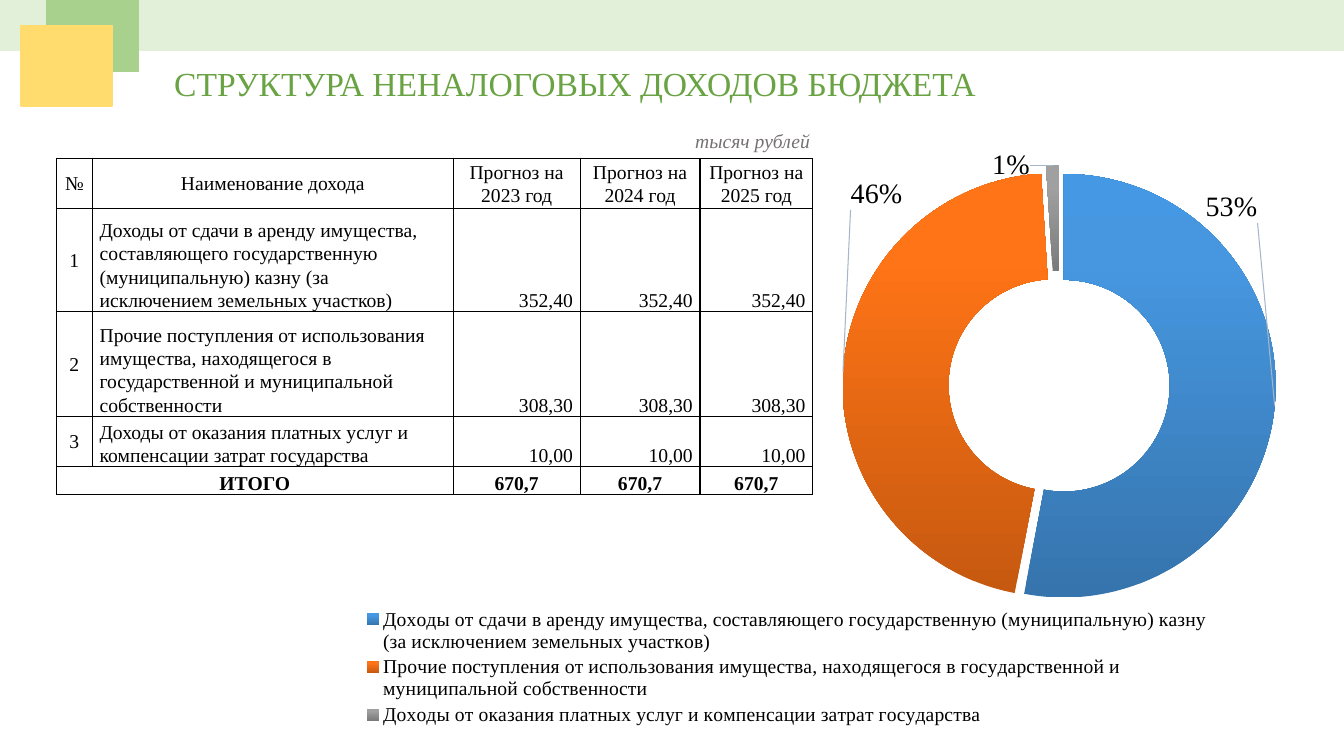
from dataclasses import dataclass

from lxml.etree import SubElement
from pptx import Presentation
from pptx.chart.data import CategoryChartData
from pptx.dml.color import RGBColor
from pptx.enum.chart import XL_CHART_TYPE as ChartType, XL_LEGEND_POSITION as LegendPosition
from pptx.enum.shapes import MSO_SHAPE as Shape
from pptx.enum.text import MSO_ANCHOR as Anchor, PP_ALIGN as Align
from pptx.oxml import parse_xml
from pptx.oxml.ns import nsdecls, qn
from pptx.util import Cm, Pt


@dataclass(frozen=True)
class Theme:
    font: str = "Times New Roman"
    title: str = "6AA343"
    band: str = "E2F0D9"
    green: str = "A9D18E"
    yellow: str = "FFDC6D"
    text: str = "000000"
    note: str = "767171"
    leader: str = "A5B6C8"
    title_size: int = 24
    body_size: int = 14
    label_size: int = 20
    slices: tuple = (("3674AD", "4697E0", "4498E4"),
                     ("C65910", "FF7416", "FF7517"),
                     ("7B7B7B", "A0A0A0", "A1A1A1"))


THEME = Theme()
INCOMES = (
    ("Доходы от сдачи в аренду имущества, составляющего государственную "
     "(муниципальную) казну (за исключением земельных участков)", "352,40", 53),
    ("Прочие поступления от использования имущества, находящегося в "
     "государственной и муниципальной собственности", "308,30", 46),
    ("Доходы от оказания платных услуг и компенсации затрат государства", "10,00", 1),
)
YEARS = (2023, 2024, 2025)
TOTAL = "670,7"
COLUMN_WIDTHS = (0.91, 9.09, 3.2, 3.02, 2.84)
ROW_HEIGHTS = (1.24, 2.59, 2.64, 1.24, 0.71)
EXPLOSIONS = (4, 5, 8)
LABEL_SHIFTS = ((0.01, -0.31), (-0.02, -0.29), (-0.045, -0.085))
PLOT_AREA = (0.528, 0.104, 0.44, 0.679)
LEGEND_AREA = (0.015, 0.795, 0.9, 0.2)


def style_font(font, **values):
    color = values.pop("color", THEME.text)
    for name, value in {"name": THEME.font, "size": Pt(THEME.body_size), **values}.items():
        setattr(font, name, value)
    font.color.rgb = RGBColor.from_string(color)


def write(frame, text, align=Align.LEFT, spacing=None, **font_values):
    para = frame.paragraphs[0]
    para.alignment, para.line_spacing = align, spacing
    span = para.add_run()
    span.text = text
    style_font(span.font, **font_values)


def add_label(page, box, text, **font_values):
    frame = page.shapes.add_textbox(*map(Cm, box)).text_frame
    frame.word_wrap = False
    write(frame, text, **font_values)


def add_block(page, box, color):
    block = page.shapes.add_shape(Shape.RECTANGLE, *map(Cm, box))
    block.shadow.inherit = False
    block.fill.solid()
    block.fill.fore_color.rgb = block.line.color.rgb = RGBColor.from_string(color)
    block.line.width = Pt(1)


def add_header(page, box):
    left, top, width, height = box
    add_label(page, (left + 4.14, top + 1.47, 20.93, 1.27),
              "СТРУКТУРА НЕНАЛОГОВЫХ ДОХОДОВ БЮДЖЕТА",
              size=Pt(THEME.title_size), color=THEME.title)
    add_block(page, (left, top, width, height), THEME.band)
    add_block(page, (left + 1.19, top, 2.31, 1.8), THEME.green)
    add_block(page, (left + 0.53, top + 0.64, 2.29, 2.03), THEME.yellow)


def add_borders(cell):
    properties = cell._tc.get_or_add_tcPr()
    for index, side in enumerate(("lnL", "lnR", "lnT", "lnB")):
        properties.insert(index, parse_xml(
            f'<a:{side} {nsdecls("a")} w="12700"><a:solidFill>'
            f'<a:srgbClr val="{THEME.text}"/></a:solidFill></a:{side}>'))


def fill_cell(cell, text, align, anchor, bold):
    for name, value in {"margin_left": Cm(0.18), "margin_right": Cm(0.18), "margin_top": 0,
                        "margin_bottom": 0, "vertical_anchor": anchor}.items():
        setattr(cell, name, value)
    cell.fill.background()
    add_borders(cell)
    write(cell.text_frame, text, align, 1.07, bold=bold)


def add_income_table(page, box):
    rows = [("№", "Наименование дохода", *(f"Прогноз на {year} год" for year in YEARS))]
    rows += [(str(number), name, *[amount] * len(YEARS))
             for number, (name, amount, _) in enumerate(INCOMES, 1)]
    rows.append(("ИТОГО", "", *[TOTAL] * len(YEARS)))
    last = len(rows) - 1
    table = page.shapes.add_table(len(rows), len(COLUMN_WIDTHS), *map(Cm, box)).table
    table.first_row = table.horz_banding = False
    for column, width in zip(table.columns, COLUMN_WIDTHS):
        column.width = Cm(width)
    for row, height in zip(table.rows, ROW_HEIGHTS):
        row.height = Cm(height)
    table.cell(last, 0).merge(table.cell(last, 1))
    for r, texts in enumerate(rows):
        for c, text in enumerate(texts):
            if r in (0, last) or c == 0:
                align = Align.CENTER
            else:
                align = Align.LEFT if c == 1 else Align.RIGHT
            middle = r == 0 or (c == 0 and r < last)
            fill_cell(table.cell(r, c), text, align,
                      Anchor.MIDDLE if middle else Anchor.BOTTOM, r == last)


def layout_xml(area, inner=False):
    """Manual layout: two numbers shift a label, four place an area."""
    parts = ['<c:layoutTarget val="inner"/>'] if inner else []
    if len(area) == 4:
        parts += ['<c:xMode val="edge"/><c:yMode val="edge"/>']
    parts += [f'<c:{name} val="{value}"/>' for name, value in zip("xywh", area)]
    return f'<c:layout {nsdecls("c")}><c:manualLayout>{"".join(parts)}</c:manualLayout></c:layout>'


def slice_xml(index):
    stops = "".join(f'<a:gs pos="{position}000"><a:srgbClr val="{color}"/></a:gs>'
                    for position, color in zip((0, 80, 100), THEME.slices[index]))
    return (f'<c:dPt {nsdecls("c", "a")}><c:idx val="{index}"/><c:bubble3D val="0"/>'
            f'<c:explosion val="{EXPLOSIONS[index]}"/><c:spPr><a:gradFill><a:gsLst>{stops}</a:gsLst>'
            '<a:lin ang="16200000" scaled="0"/></a:gradFill><a:ln><a:noFill/></a:ln></c:spPr></c:dPt>')


def labels_xml():
    shows = "".join(f'<c:show{name} val="{int(name == "Percent")}"/>' for name in
                    ("LegendKey", "Val", "CatName", "SerName", "Percent", "BubbleSize"))
    style = ('<c:numFmt formatCode="0%" sourceLinked="0"/><c:spPr><a:noFill/></c:spPr>'
             '<c:txPr><a:bodyPr/><a:p><a:pPr>'
             f'<a:defRPr sz="{THEME.label_size}00"><a:solidFill><a:srgbClr val="{THEME.text}"/>'
             f'</a:solidFill><a:latin typeface="{THEME.font}"/></a:defRPr></a:pPr></a:p></c:txPr>')
    points = "".join(f'<c:dLbl><c:idx val="{index}"/>{layout_xml(shift)}{style}{shows}</c:dLbl>'
                     for index, shift in enumerate(LABEL_SHIFTS))
    return (f'<c:dLbls {nsdecls("c", "a")}>{points}{style}{shows}<c:showLeaderLines val="1"/>'
            f'<c:leaderLines><c:spPr><a:ln w="9525"><a:solidFill><a:srgbClr val="{THEME.leader}"/>'
            '</a:solidFill></a:ln></c:spPr></c:leaderLines></c:dLbls>')


def add_share_chart(page, box):
    data = CategoryChartData()
    data.categories = [name for name, _, _ in INCOMES]
    data.add_series("Доля", [share for _, _, share in INCOMES])
    chart = page.shapes.add_chart(ChartType.DOUGHNUT_EXPLODED, *map(Cm, box), data).chart
    chart.has_title = False
    chart.has_legend = True
    chart.legend.position = LegendPosition.BOTTOM
    chart.legend.include_in_layout = False
    style_font(chart.font, size=Pt(10), name="Calibri")
    style_font(chart.legend.font)

    root = chart._chartSpace
    series = root.find(".//" + qn("c:ser"))
    for old in series.findall(qn("c:explosion")):
        series.remove(old)
    categories = series.find(qn("c:cat"))
    for xml in (*map(slice_xml, range(len(INCOMES))), labels_xml()):
        categories.addprevious(parse_xml(xml))
    for tag, area in (("c:plotArea", PLOT_AREA), ("c:legend", LEGEND_AREA)):
        part = root.find(".//" + qn(tag))
        for old in part.findall(qn("c:layout")):
            part.remove(old)
        part.insert(int(tag == "c:legend"), parse_xml(layout_xml(area, tag == "c:plotArea")))
    frame = parse_xml(f'<c:spPr {nsdecls("c", "a")}><a:noFill/></c:spPr>')
    SubElement(SubElement(frame, qn("a:ln")), qn("a:noFill"))
    root.find(qn("c:chart")).addnext(frame)


def main():
    deck = Presentation()
    deck.slide_width, deck.slide_height = Cm(33.87), Cm(19.05)
    page = deck.slides.add_slide(deck.slide_layouts[6])
    add_header(page, (0, 0, 33.87, 1.27))
    add_income_table(page, (1.42, 3.99, sum(COLUMN_WIDTHS), sum(ROW_HEIGHTS)))
    add_label(page, (17.27, 3.12, 3.53, 0.86), "тысяч рублей", color=THEME.note, italic=True)
    add_share_chart(page, (8.56, 2.74, 24.26, 15.72))
    deck.save("out.pptx")


if __name__ == "__main__":
    main()
